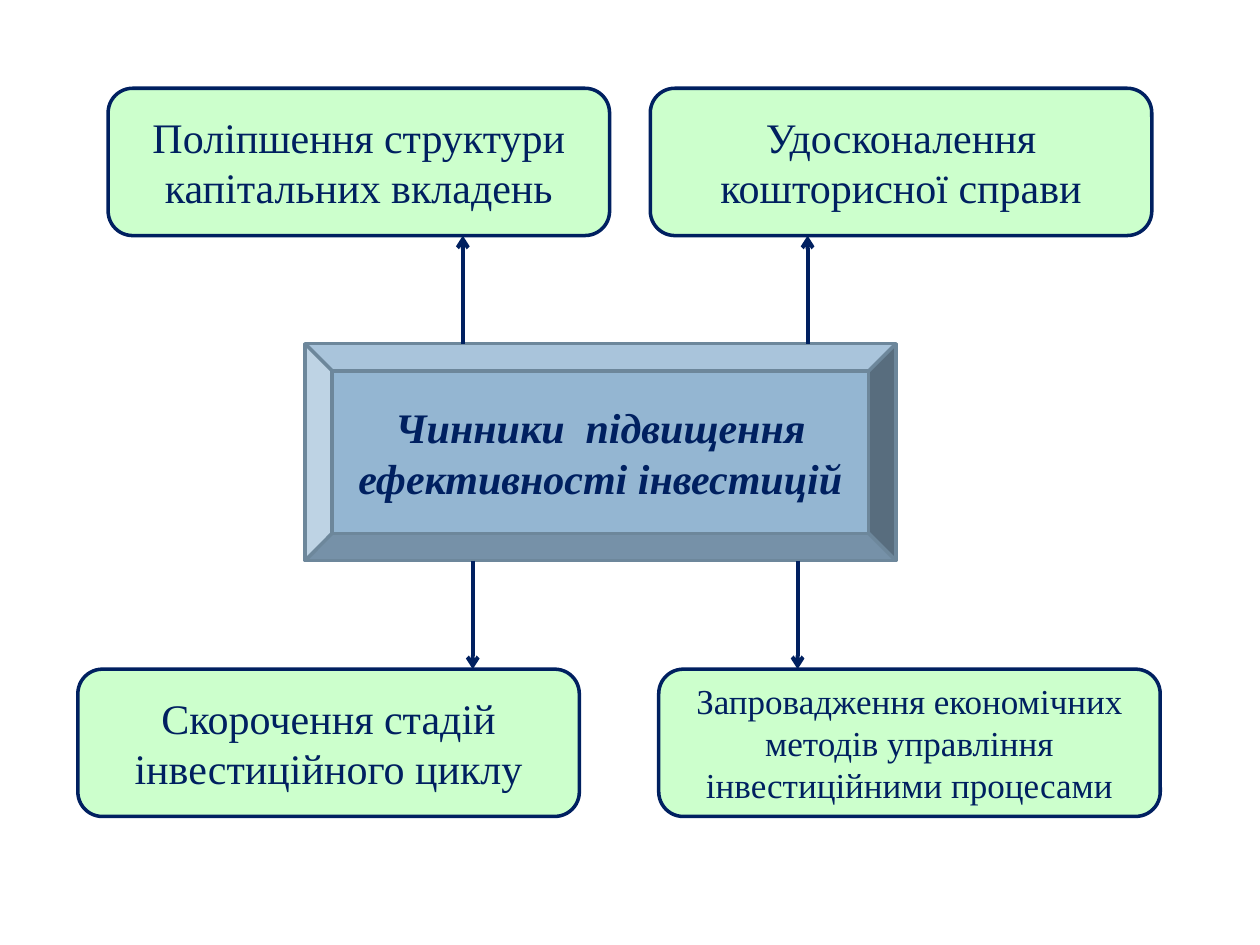
"""Build a slide showing four factors that raise investment efficiency."""
from lxml.etree import SubElement
from pptx import Presentation
from pptx.dml.color import RGBColor
from pptx.enum.shapes import MSO_CONNECTOR, MSO_SHAPE
from pptx.enum.text import MSO_ANCHOR, PP_ALIGN
from pptx.oxml.ns import qn
from pptx.util import Cm, Pt

NAVY = RGBColor(0x00, 0x20, 0x60)
GREEN = RGBColor(0xCC, 0xFF, 0xCC)
BLUE = RGBColor(0x94, 0xB6, 0xD2)
STEEL = RGBColor(0x6D, 0x87, 0x9B)

FACTOR_WIDTH, FACTOR_HEIGHT = 10.11, 2.97
TOP_ROW, BOTTOM_ROW = 1.78, 13.49
CENTRE_LEFT, CENTRE_TOP = 6.15, 6.93
CENTRE_WIDTH, CENTRE_HEIGHT = 11.91, 4.37


def add_box(text, kind, left, top, width, height, fill=GREEN, line=NAVY, size=24, emphasis=False):
    shape = slide.shapes.add_shape(kind, Cm(left), Cm(top), Cm(width), Cm(height))
    shape.shadow.inherit = False
    shape.fill.solid()
    shape.fill.fore_color.rgb = fill
    shape.line.color.rgb = line
    shape.line.width = Pt(2)
    frame = shape.text_frame
    frame.word_wrap = True
    frame.vertical_anchor = MSO_ANCHOR.MIDDLE
    paragraph = frame.paragraphs[0]
    paragraph.alignment = PP_ALIGN.CENTER
    run = paragraph.add_run()
    run.text = text
    run.font.name = "Times New Roman"
    run.font.size = Pt(size)
    run.font.bold = run.font.italic = emphasis
    run.font.color.rgb = NAVY


presentation = Presentation()
presentation.slide_width = Cm(25.4)
presentation.slide_height = Cm(19.05)
slide = presentation.slides.add_slide(presentation.slide_layouts[6])

add_box("Чинники  підвищення ефективності інвестицій", MSO_SHAPE.BEVEL,
        CENTRE_LEFT, CENTRE_TOP, CENTRE_WIDTH, CENTRE_HEIGHT,
        fill=BLUE, line=STEEL, emphasis=True)

factors = [
    ("Поліпшення структури капітальних вкладень", 2.18, TOP_ROW, 24),
    ("Удосконалення кошторисної справи", 13.11, TOP_ROW, 24),
    ("Запровадження економічних методів управління інвестиційними процесами",
     13.28, BOTTOM_ROW, 20),
    ("Скорочення стадій інвестиційного циклу", 1.57, BOTTOM_ROW, 24),
]
for text, left, top, size in factors:
    add_box(text, MSO_SHAPE.ROUNDED_RECTANGLE, left, top, FACTOR_WIDTH, FACTOR_HEIGHT, size=size)

upward = (CENTRE_TOP, TOP_ROW + FACTOR_HEIGHT)
downward = (CENTRE_TOP + CENTRE_HEIGHT, BOTTOM_ROW)
for x, (start, end) in [(9.33, upward), (16.28, upward), (9.53, downward), (16.08, downward)]:
    arrow = slide.shapes.add_connector(MSO_CONNECTOR.STRAIGHT, Cm(x), Cm(start), Cm(x), Cm(end))
    arrow.line.color.rgb = NAVY
    arrow.line.width = Pt(2.25)
    SubElement(arrow.line._get_or_add_ln(), qn("a:tailEnd"), type="arrow")
    SubElement(arrow._element.spPr, qn("a:effectLst"))

presentation.save("out.pptx")
